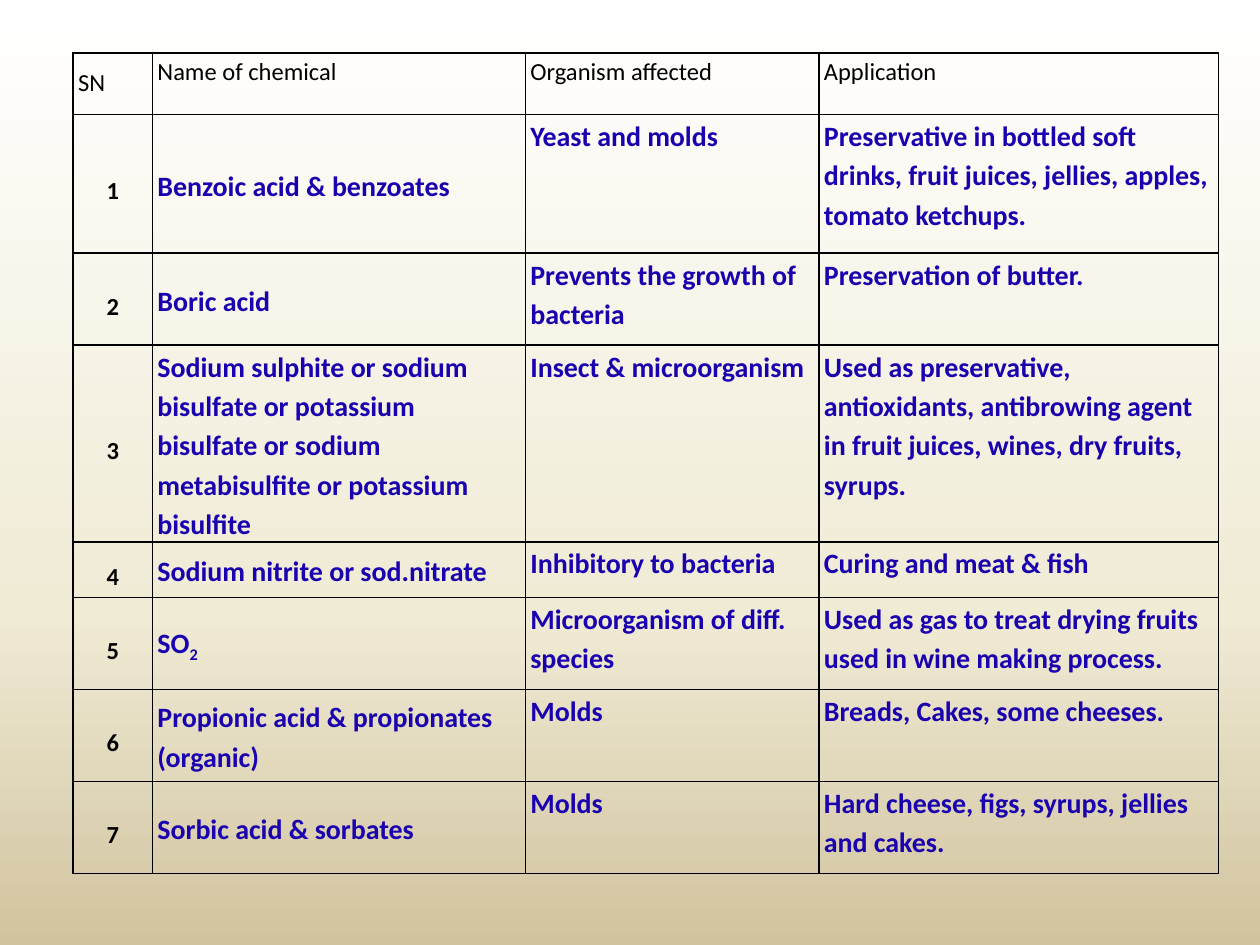
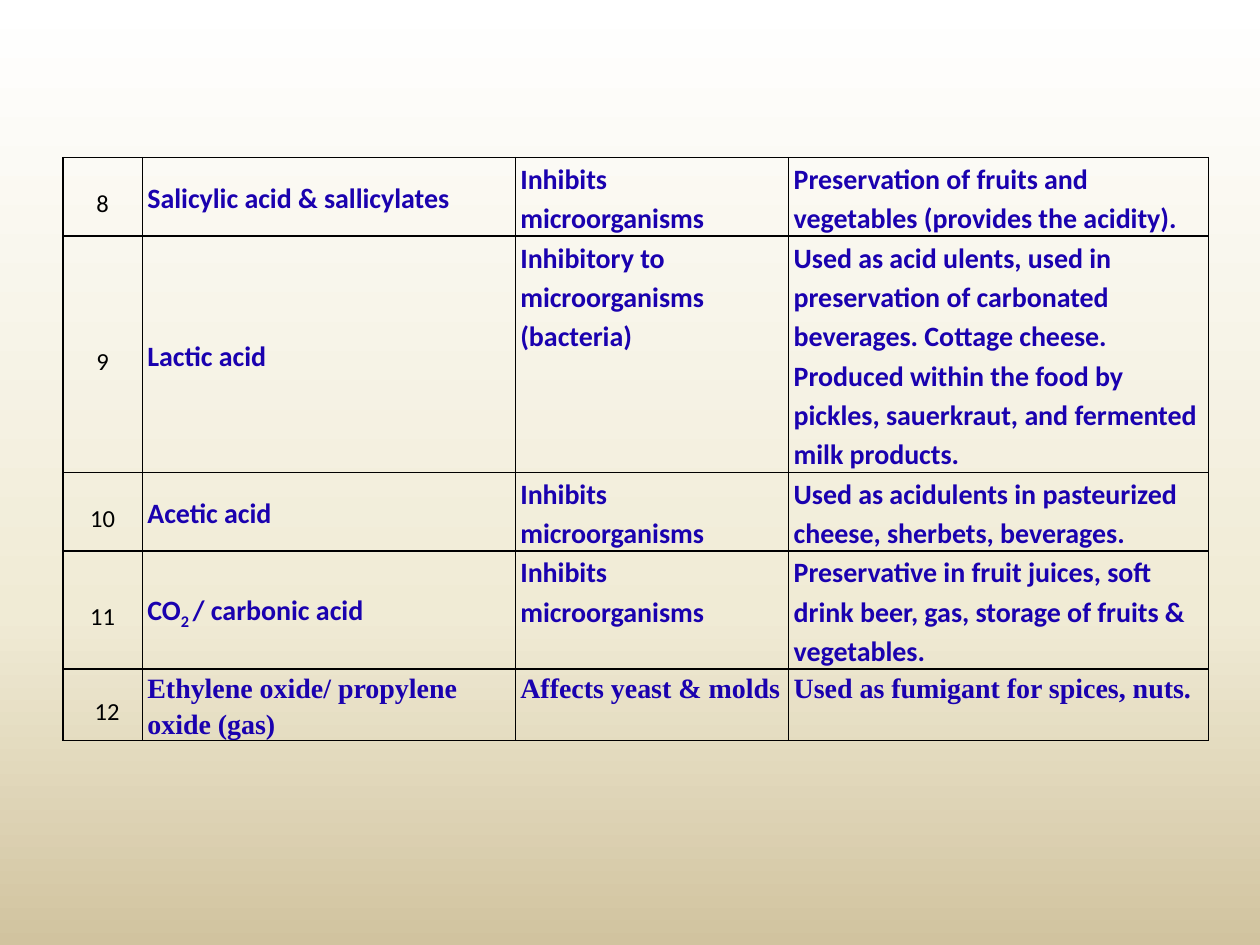
from copy import deepcopy

from lxml import etree
from pptx import Presentation
from pptx.dml.color import RGBColor
from pptx.enum.text import MSO_ANCHOR, PP_ALIGN
from pptx.oxml.ns import qn
from pptx.util import Inches, Pt

BLACK, BLUE = "000000", "1A01AF"
BACKGROUND_STOPS = [(0, "FFFFFF"), (0.65, "F0EBD5"), (1, "D1C39F")]
BODY_FONT, GAS_FONT = "Calibri", "Times New Roman"

# Text between bars is subscript.
HEADER = ("SN", "Name of chemical ", "Organism affected ", "Application ")
FIRST_CHEMICALS = [
    ("1", "Benzoic acid & benzoates", "Yeast and molds",
     "Preservative in bottled soft drinks, fruit juices, jellies, apples, tomato ketchups."),
    ("2", "Boric acid", "Prevents the growth of bacteria", "Preservation of butter."),
    ("3", "Sodium sulphite or sodium bisulfate or potassium bisulfate or sodium "
          "metabisulfite or potassium bisulfite", "Insect & microorganism",
     "Used as preservative, antioxidants, antibrowing agent in fruit juices, wines, "
     "dry fruits, syrups."),
    ("4", "Sodium nitrite or sod.nitrate", "Inhibitory to bacteria", "Curing and meat & fish"),
    ("5", "SO|2|", "Microorganism of diff. species",
     "Used as gas to treat drying fruits used in wine making process."),
    ("6", "Propionic acid & propionates (organic)", "Molds", "Breads, Cakes, some cheeses."),
    ("7", "Sorbic acid & sorbates", "Molds", "Hard cheese, figs, syrups, jellies and cakes."),
]
MORE_CHEMICALS = [
    ("8", "Salicylic acid & sallicylates", "Inhibits microorganisms",
     "Preservation of fruits and vegetables (provides the acidity)."),
    ("9", "Lactic acid", "Inhibitory to microorganisms (bacteria)",
     "Used as acid ulents, used in preservation of carbonated beverages. Cottage cheese. "
     "Produced within the food by pickles, sauerkraut, and fermented milk products."),
    ("10", "Acetic acid", "Inhibits microorganisms",
     "Used as acidulents in pasteurized cheese, sherbets, beverages."),
    ("11", "CO|2 |/ carbonic acid", "Inhibits microorganisms",
     "Preservative in fruit juices, soft drink beer, gas, storage of fruits & vegetables."),
    ("12", "Ethylene oxide/ propylene oxide (gas)", "Affects yeast & molds",
     "Used as fumigant for spices, nuts."),
]
TABLES = [
    {"rows": [HEADER] + FIRST_CHEMICALS, "left": 0.58, "top": 0.42,
     "widths": [0.63, 2.96, 2.33, 3.17], "bold_numbers": True,
     "heights": [0.49, 1.1, 0.73, 1.48, 0.44, 0.73, 0.73, 0.73]},
    {"rows": MORE_CHEMICALS, "left": 0.5, "top": 1.25,
     "widths": [0.63, 2.96, 2.17, 3.33], "bold_numbers": False,
     "heights": [0.62, 1.86, 0.62, 0.93, 0.55]},
]


def rgb(color):
    return RGBColor.from_string(color)


def paint_background(master):
    fill = master.background.fill
    fill.gradient()
    fill.gradient_angle = 270
    stop_list = master.element.find(".//" + qn("a:gsLst"))
    stop_list.append(deepcopy(stop_list[0]))
    for stop, (position, color) in zip(fill.gradient_stops, BACKGROUND_STOPS):
        stop.position = position
        stop.color.rgb = rgb(color)


def draw_borders(cell):
    properties = cell._tc.get_or_add_tcPr()
    for index, side in enumerate(("a:lnL", "a:lnR", "a:lnT", "a:lnB")):
        line = etree.Element(qn(side), w=str(Pt(1)))
        solid = etree.SubElement(line, qn("a:solidFill"))
        etree.SubElement(solid, qn("a:srgbClr"), val=BLACK)
        properties.insert(index, line)


def write_runs(paragraph, text, font, size, color, bold):
    """Write text, lowering the parts that stand between bars."""
    for index, part in enumerate(text.split("|")):
        if not part:
            continue
        run = paragraph.add_run()
        run.text = part
        run.font.name, run.font.size, run.font.bold = font, Pt(size), bold
        run.font.color.rgb = rgb(color)
        if index % 2:
            run.font._element.set("baseline", "-25000")


def fill_cell(cell, text, column, row, bold_numbers):
    is_header, is_number, is_gas = row is HEADER, column == 0, row[0] == "12"
    cell.margin_left = cell.margin_right = Inches(0.04)
    cell.margin_top = cell.margin_bottom = 0
    cell.fill.background()
    draw_borders(cell)
    middle = not is_header and column < 2
    cell.vertical_anchor = MSO_ANCHOR.MIDDLE if middle else MSO_ANCHOR.TOP

    paragraph = cell.text_frame.paragraphs[0]
    paragraph.line_spacing = 1.5 if is_number else 1.15
    if is_header:
        paragraph.alignment = PP_ALIGN.JUSTIFY
    else:
        paragraph.alignment = PP_ALIGN.CENTER if is_number else PP_ALIGN.LEFT
    if is_gas and is_number:
        paragraph._p.get_or_add_pPr().set("marL", str(Inches(0.07)))
    elif is_gas:
        paragraph.space_after = Pt(10)

    if is_header or is_number:
        write_runs(paragraph, text, BODY_FONT, 14, BLACK, bold_numbers and not is_header)
    else:
        write_runs(paragraph, text, GAS_FONT if is_gas else BODY_FONT, 16, BLUE, True)


def add_chemical_table(slide, content):
    rows, widths, heights = content["rows"], content["widths"], content["heights"]
    table = slide.shapes.add_table(
        len(rows), len(widths), Inches(content["left"]), Inches(content["top"]),
        Inches(sum(widths)), Inches(sum(heights))).table
    table.first_row = table.horz_banding = False
    for column, width in zip(table.columns, widths):
        column.width = Inches(width)
    for table_row, height, row in zip(table.rows, heights, rows):
        table_row.height = Inches(height)
        for column, (cell, text) in enumerate(zip(table_row.cells, row)):
            fill_cell(cell, text, column, row, content["bold_numbers"])


def main():
    deck = Presentation()
    deck.slide_width, deck.slide_height = Inches(10), Inches(7.5)
    paint_background(deck.slide_master)
    for content in TABLES:
        add_chemical_table(deck.slides.add_slide(deck.slide_layouts[6]), content)
    deck.save("out.pptx")


if __name__ == "__main__":
    main()
